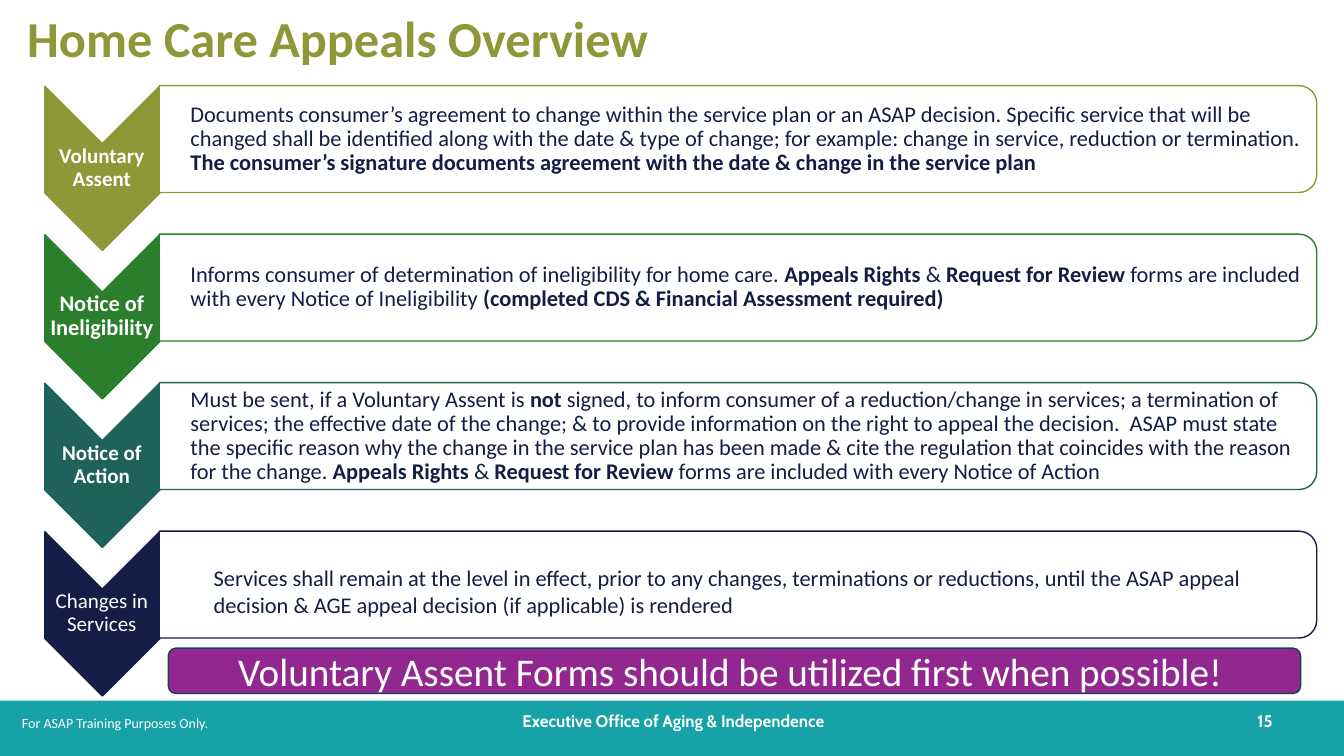
"""Builds the Home Care Appeals Overview slide."""
import pptx
import pptx.dml.color
import pptx.enum.shapes
import pptx.enum.text
import pptx.util

Inches = pptx.util.Inches
Shape = pptx.enum.shapes.MSO_SHAPE
Align = pptx.enum.text.PP_ALIGN
Anchor = pptx.enum.text.MSO_ANCHOR

COLORS = {
    "white": "FFFFFF", "teal": "16A2A7", "olive": "8F9838", "title": "8E9838",
    "green": "2B7E2B", "pine": "1F625C", "navy": "141D45",
    "purple": "91278F", "edge": "0A4749",
}
STEPS = [
    ("*Voluntary Assent*", 15, "olive",
     "Documents consumer’s agreement to change within the service plan or an ASAP decision. "
     "Specific service that will be changed shall be identified along with the date & type of "
     "change; for example: change in service, reduction or termination. *The consumer’s "
     "signature documents agreement with the date & change in the service plan*"),
    ("*Notice of Ineligibility*", 16, "green",
     "Informs consumer of determination of ineligibility for home care. *Appeals Rights *& "
     "*Request for Review* forms are included with every Notice of Ineligibility* (completed "
     "CDS & Financial Assessment required)*"),
    ("*Notice of Action*", 15, "pine",
     "Must be sent, if a Voluntary Assent is *not* signed, to inform consumer of a "
     "reduction/change in services; a termination of services; the effective date of the "
     "change; & to provide information on the right to appeal the decision.  ASAP must state "
     "the specific reason why the change in the service plan has been made & cite the "
     "regulation that coincides with the reason for the change. *Appeals Rights* &* Request "
     "for Review *forms are included with every Notice of Action"),
    ("Changes in Services", 15, "navy",
     "Services shall remain at the level in effect, prior to any changes, terminations or "
     "reductions, until the ASAP appeal decision & AGE appeal decision (if applicable) is "
     "rendered"),
]
STEP_PITCH = 4.42 / 3


def rgb(name):
    return pptx.dml.color.RGBColor.from_string(COLORS[name])


def write(box, text, size=16, color="white", font="Calibri", align=Align.LEFT,
          anchor=Anchor.MIDDLE, spacing=None, insets=(0.1, 0.05, 0.1, 0.05)):
    """Fill a box with one paragraph; text between asterisks is bold."""
    frame = box.text_frame
    frame.word_wrap = True
    frame.vertical_anchor = anchor
    (frame.margin_left, frame.margin_top,
     frame.margin_right, frame.margin_bottom) = map(Inches, insets)
    para = frame.paragraphs[0]
    para.alignment = align
    para.line_spacing = spacing
    for index, part in enumerate(text.split("*")):
        if part:
            span = para.add_run()
            span.text = part
            span.font.name = font
            span.font.size = pptx.util.Pt(size)
            span.font.bold = index % 2 == 1
            span.font.color.rgb = rgb(color)


class AppealsSlide:
    """Holds the deck and its slide, and draws each kind of element."""

    def __init__(self):
        self.deck = pptx.Presentation()
        self.deck.slide_width = Inches(13.33)
        self.deck.slide_height = Inches(7.5)
        self.page = self.deck.slides.add_slide(self.deck.slide_layouts[6])

    def shape(self, kind, place, fill, line=None, rotation=0):
        """Add a filled shape with an optional outline."""
        shape = self.page.shapes.add_shape(kind, *map(Inches, place))
        shape.shadow.inherit = False
        shape.rotation = rotation
        shape.fill.solid()
        shape.fill.fore_color.rgb = rgb(fill)
        if line:
            shape.line.color.rgb = rgb(line)
            shape.line.width = pptx.util.Pt(1)
        else:
            shape.line.fill.background()
        return shape

    def text(self, place, text, **style):
        """Add a text box."""
        write(self.page.shapes.add_textbox(*map(Inches, place)), text, **style)

    def step(self, index, label, size, color, body):
        """Add one chevron with its label and its card."""
        drop = index * STEP_PITCH
        self.shape(Shape.CHEVRON, (0.2, 1.1 + drop, 1.63, 1.14), color, color, 90)
        self.text((0.44, 1.42 + drop, 1.14, 0.49), label, size=size, align=Align.CENTER,
                  spacing=0.9, insets=(0.01,) * 4)
        self.shape(Shape.ROUND_2_SAME_RECTANGLE, (6.79, -4.36 + drop, 1.06, 11.48),
                   "white", color, 90)
        last = index == len(STEPS) - 1
        self.text((1.58, 0.9 + drop, 11.43, 0.96), body, color="navy",
                  spacing=1.03 if last else 0.9,
                  insets=(0.54, 0.14, 0.02, 0.02) if last else (0.31, 0.01, 0.01, 0.01))

    def footer(self):
        """Add the footer band and its texts."""
        self.shape(Shape.RECTANGLE, (0, 6.95, 13.33, 0.55), "teal")
        self.text((4.43, 6.95, 4.5, 0.4), "*Executive Office of Aging & Independence*",
                  size=12, font="Cabin", align=Align.CENTER)
        self.text((12.21, 6.95, 0.51, 0.4), "*15*", size=12, font="Cabin", align=Align.RIGHT)
        self.text((0.12, 7.04, 3.67, 0.27), "For ASAP Training Purposes Only.", size=10,
                  anchor=Anchor.TOP)


def main():
    slide = AppealsSlide()
    slide.footer()
    slide.text((0.27, 0.15, 12.08, 0.44), "*Home Care Appeals Overview*", size=36,
               color="title", insets=(0,) * 4)
    for index, step in enumerate(STEPS):
        slide.step(index, *step)
    banner = slide.shape(Shape.ROUNDED_RECTANGLE, (1.67, 6.43, 11.23, 0.45), "purple", "edge")
    write(banner, "Voluntary Assent Forms should be utilized first when possible! ", size=28,
          align=Align.CENTER)
    slide.deck.save("out.pptx")


if __name__ == "__main__":
    main()
